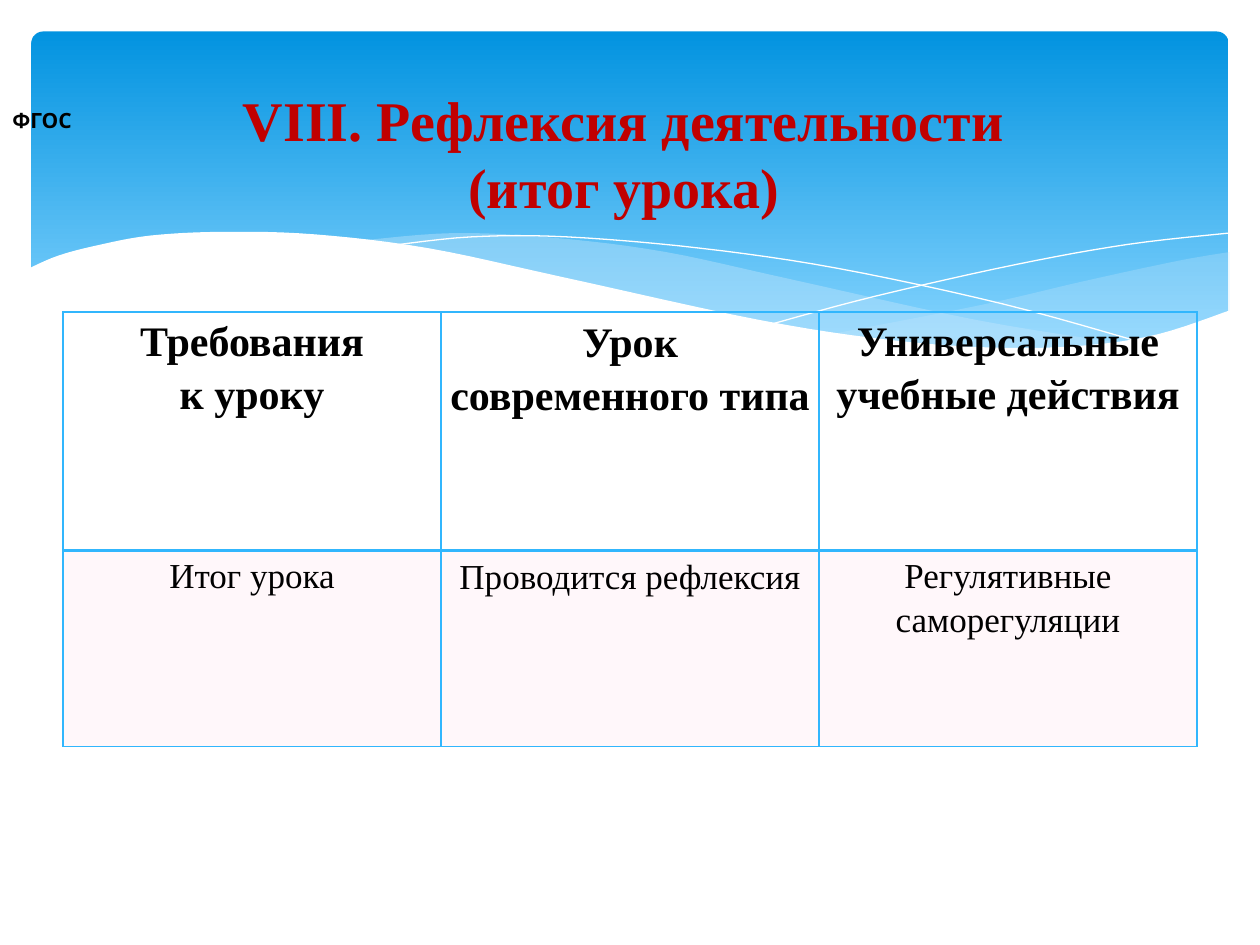
import pptx
import pptx.dml.color
import pptx.enum.shapes
import pptx.enum.text
import pptx.oxml
import pptx.oxml.ns
import pptx.util
from lxml import etree

RGBColor = pptx.dml.color.RGBColor
Inches, Pt = pptx.util.Inches, pptx.util.Pt
PP_ALIGN, MSO_ANCHOR = pptx.enum.text.PP_ALIGN, pptx.enum.text.MSO_ANCHOR
qn = pptx.oxml.ns.qn

SKY_TOP = RGBColor(0x02, 0x93, 0xE0)
SKY_BOTTOM = RGBColor(0x83, 0xD3, 0xFE)
MIST = RGBColor(0xC6, 0xE7, 0xFC)
WHITE = RGBColor(0xFF, 0xFF, 0xFF)
BLACK = RGBColor(0, 0, 0)
RED = RGBColor(0xC0, 0, 0)
GRID = RGBColor(0x31, 0xB6, 0xFD)
PINK = RGBColor(0xFF, 0xD7, 0xE8)
SERIF = "Times New Roman"

RIGHT_WAVE_TOP = [(97.6, 20), (93.5, 20.7), (86.1, 22.3), (77.9, 24.2), (66.1, 26.5)]
RIGHT_WAVE_BOTTOM = [(66.1, 26.5), (73.2, 27.4), (80.3, 27.8), (87.2, 27.4), (92.8, 26.3), (97.6, 24.7)]
MIDDLE_WAVE_TOP = [(89.3, 27.3), (77.5, 25.4), (62.9, 22.2), (52.8, 20), (44.2, 18.9), (36.1, 18.5), (28.6, 19.1)]
MIDDLE_WAVE_BOTTOM = [(28.6, 19.1), (36.2, 20.3), (44.9, 22.2), (56.6, 24.8), (68, 26.8), (78.5, 27.8), (89.3, 27.3)]
FALLING_LINE = [(30.9, 19.5), (37.4, 18.8), (45, 18.8), (55.6, 19.7), (66.5, 21.3), (79.5, 24.1), (90.7, 27.2)]
RISING_LINE = [(61.3, 25.7), (69.5, 23.5), (80.6, 21), (89.5, 19.4), (97.5, 18.5)]
WHITE_WAVE = [(97.7, 24.6), (92, 26.5), (86.3, 27.4), (79.3, 27.6), (70.8, 27), (60.3, 25.4), (44.7, 22),
              (34, 19.7), (25, 18.6), (17.7, 18.4), (11.9, 18.7), (7.6, 19.5), (4.6, 20.3), (2.3, 21.3)]


def smooth(knots, steps=6):
    ends = [knots[0]] + knots + [knots[-1]]
    points = []
    for a, b, c, d in zip(ends, ends[1:], ends[2:], ends[3:]):
        for i in range(steps):
            t = i / steps
            points.append(tuple(
                q + t * (r - p + t * (2 * p - 5 * q + 4 * r - s + t * (3 * q - p - 3 * r + s))) / 2
                for p, q, r, s in zip(a, b, c, d)))
    return points + [knots[-1]]


def set_alpha(fill_parent, percent):
    color = fill_parent.find(qn("a:solidFill"))[0]
    etree.SubElement(color, qn("a:alpha")).set("val", str(percent * 1000))


def add_curve(slide, box, points, fill=None, alpha=100):
    left, top, width, _ = box
    unit = width / 100
    pts = [(round(left + x * unit), round(top + y * unit)) for x, y in points]
    builder = slide.shapes.build_freeform(*pts[0], scale=1.0)
    builder.add_line_segments(pts[1:], close=fill is not None)
    sp = builder.convert_to_shape()
    sp.shadow.inherit = False
    if fill is None:
        sp.fill.background()
        sp.line.color.rgb = WHITE
        sp.line.width = 0
    else:
        sp.fill.solid()
        sp.fill.fore_color.rgb = fill
        sp.line.fill.background()
        if alpha < 100:
            set_alpha(sp._element.spPr, alpha)


def add_header(slide, box):
    left, top, width, height = box
    margin = round(width * 0.025)
    sp = slide.shapes.add_shape(pptx.enum.shapes.MSO_SHAPE.ROUNDED_RECTANGLE, left + margin,
                                top + margin, width - 2 * margin, round(width * 0.27))
    sp.adjustments[0] = 0.034
    sp.shadow.inherit = False
    sp.line.fill.background()
    sp.fill.gradient()
    sp.fill.gradient_angle = 270
    for stop, color, position in zip(sp.fill.gradient_stops, (SKY_TOP, SKY_BOTTOM), (0, 0.9)):
        stop.color.rgb, stop.position = color, position
    add_curve(slide, box, smooth(RIGHT_WAVE_TOP) + smooth(RIGHT_WAVE_BOTTOM), MIST, 29)
    add_curve(slide, box, smooth(MIDDLE_WAVE_TOP) + smooth(MIDDLE_WAVE_BOTTOM), MIST, 40)
    add_curve(slide, box, smooth(FALLING_LINE))
    add_curve(slide, box, smooth(RISING_LINE))
    add_curve(slide, box, smooth(WHITE_WAVE) + [(2.3, 32.9), (97.7, 32.9)], WHITE)


def set_font(p, name, size, color, bold):
    p.font.name, p.font.size, p.font.bold = name, Pt(size), bold
    p.font.color.rgb = color


def add_title(slide, box):
    sp = slide.shapes.title
    slide.shapes._spTree.append(sp._element)
    sp.left, sp.top, sp.width, sp.height = box
    tf = sp.text_frame
    tf.text = "VIII. Рефлексия деятельности\n(итог урока)"
    tf.vertical_anchor = MSO_ANCHOR.TOP
    tf.margin_top = Inches(0.08)
    for p in tf.paragraphs:
        p.alignment = PP_ALIGN.CENTER
        set_font(p, SERIF, 32, RED, True)


def add_label(slide, box):
    tf = slide.shapes.add_textbox(*box).text_frame
    tf.word_wrap = True
    tf.margin_top = Inches(0.1)
    tf.text = "ФГОС"
    set_font(tf.paragraphs[0], "Cabin", 12, BLACK, True)


def set_borders(cell, widths):
    tcPr = cell._tc.get_or_add_tcPr()
    for i, (side, width) in enumerate(widths.items()):
        ln = etree.Element(qn("a:ln" + side), w=str(Pt(width)))
        fill = etree.SubElement(ln, qn("a:solidFill"))
        etree.SubElement(fill, qn("a:srgbClr"), val=str(GRID))
        tcPr.insert(i, ln)


def add_lesson_table(slide, box):
    rows = [
        ["Требования\nк уроку", "Урок\nсовременного типа", "Универсальные\nучебные действия"],
        ["Итог урока", "Проводится рефлексия", "Регулятивные саморегуляции"],
    ]
    table = slide.shapes.add_table(len(rows), len(rows[0]), *box).table
    table.first_row = table.horz_banding = False
    for row, share in zip(table.rows, (0.55, 0.45)):
        row.height = round(box[3] * share)
    for i, texts in enumerate(rows):
        header = i == 0
        for j, text in enumerate(texts):
            cell = table.cell(i, j)
            cell.text = text
            cell.margin_left = cell.margin_right = Inches(0.07 if j == 1 else 0)
            cell.margin_top = Inches(0.01 if j == 1 else 0)
            cell.margin_bottom = 0
            for p in cell.text_frame.paragraphs:
                p.alignment = PP_ALIGN.CENTER
                p.line_spacing = 1.15
                set_font(p, SERIF, 24 if header else 20, BLACK, header)
            if header:
                cell.fill.background()
            else:
                cell.fill.solid()
                cell.fill.fore_color.rgb = PINK
                set_alpha(cell._tc.tcPr, 20)
            set_borders(cell, {"L": 1, "R": 1, "T": 1 if header else 2, "B": 2 if header else 1})


def main():
    prs = pptx.Presentation()
    prs.slide_width, prs.slide_height = Inches(10), Inches(7.5)
    w, h = prs.slide_width, prs.slide_height

    def share(x, y, width, height):
        return round(w * x), round(h * y), round(w * width), round(h * height)

    slide = prs.slides.add_slide(prs.slide_layouts[5])
    add_header(slide, share(0, 0, 1, 0.44))
    add_title(slide, share(0.07, 0.08, 0.85, 0.23))
    add_label(slide, share(0, 0.1, 0.07, 0.05))
    add_lesson_table(slide, share(0.05, 0.33, 0.9, 0.46))
    prs.save("out.pptx")


if __name__ == "__main__":
    main()
